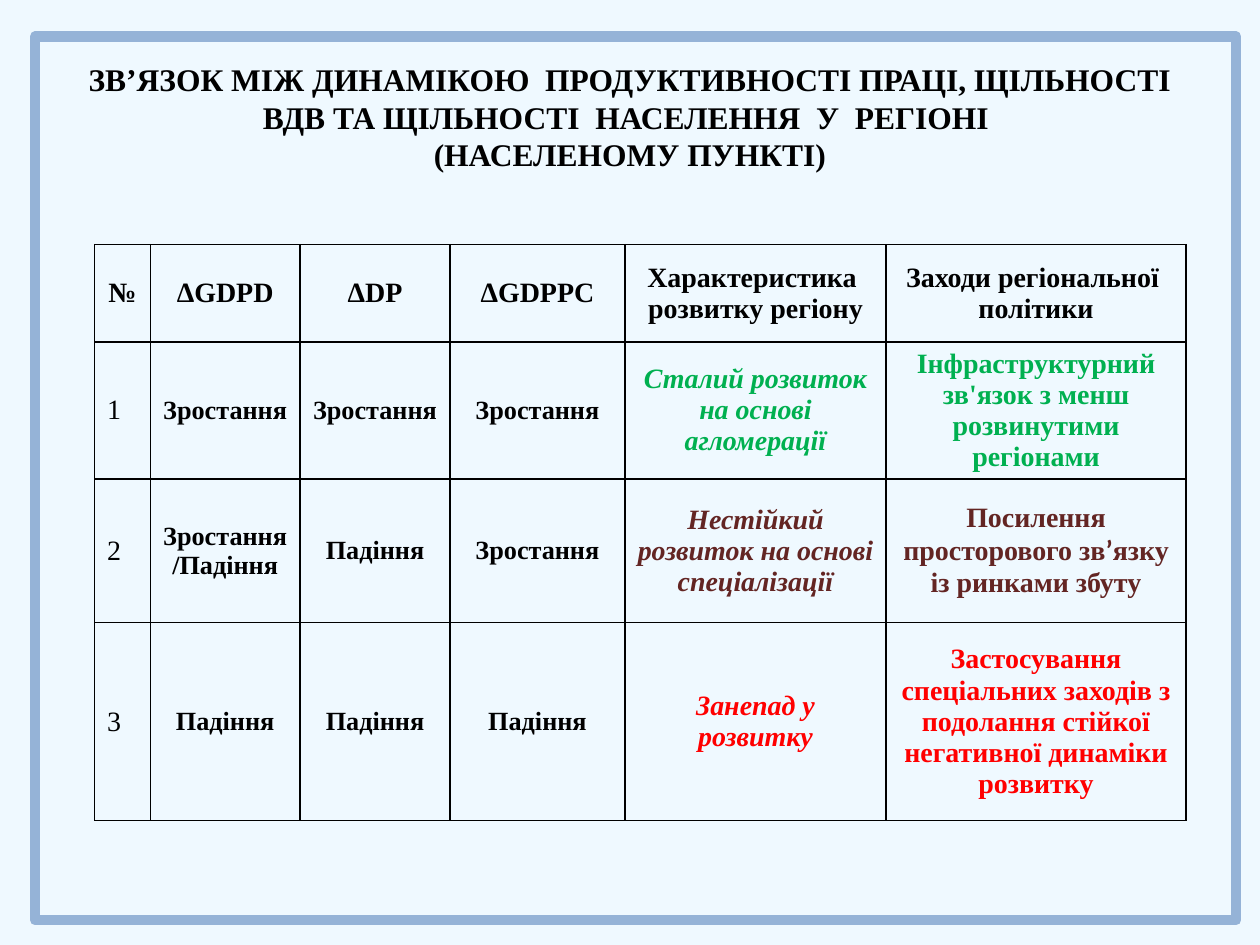
"""Build the slide on productivity, GDP density and population density dynamics."""
from dataclasses import dataclass

import lxml.etree
import pptx
import pptx.dml.color
import pptx.enum.shapes
import pptx.enum.text
import pptx.oxml
import pptx.oxml.ns
import pptx.table
import pptx.text.text
import pptx.util
from pptx.util import Cm

SERIF = "Times New Roman"
BLACK = "000000"
CENTER = pptx.enum.text.PP_ALIGN.CENTER
LEFT = pptx.enum.text.PP_ALIGN.LEFT
MIDDLE = pptx.enum.text.MSO_ANCHOR.MIDDLE
COLUMN_WIDTHS = (1.12, 3.02, 3.02, 3.53, 5.26, 6.05)
ROW_HEIGHTS = (1.96, 2.76, 2.9, 3.99)
HEADINGS = ("№", "ΔGDPD", "ΔDP", "ΔGDPPC", "Характеристика \nрозвитку регіону",
            "Заходи регіональної \nполітики")


@dataclass(frozen=True)
class TextStyle:
    size: float
    color: str = BLACK
    bold: bool = True
    italic: bool = False
    align: pptx.enum.text.PP_ALIGN = CENTER


@dataclass(frozen=True)
class Scenario:
    trends: tuple[str, str, str]
    outcome: str
    policy: str
    color: str


SCENARIOS = (
    Scenario(("Зростання", "Зростання", "Зростання"),
             "Сталий розвиток на основі агломерації",
             "Інфраструктурний зв'язок з менш розвинутими регіонами", "00B050"),
    Scenario(("Зростання /Падіння", "Падіння", "Зростання"),
             "Нестійкий розвиток на основі спеціалізації",
             "Посилення просторового зв’язку із ринками збуту", "632523"),
    Scenario(("Падіння", "Падіння", "Падіння"),
             "Занепад у розвитку",
             "Застосування спеціальних заходів з подолання стійкої негативної динаміки розвитку",
             "FF0000"),
)


def rgb(value: str) -> pptx.dml.color.RGBColor:
    """Turn a hex string into a colour."""
    return pptx.dml.color.RGBColor.from_string(value)


def format_paragraph(paragraph: pptx.text.text._Paragraph, style: TextStyle) -> None:
    """Apply a text style to a whole paragraph."""
    paragraph.alignment = style.align
    font = paragraph.font
    font.name, font.size = SERIF, pptx.util.Pt(style.size)
    font.bold, font.italic = style.bold, style.italic
    font.color.rgb = rgb(style.color)


def add_borders(cell: pptx.table._Cell) -> None:
    """Draw a thin black line on each side of a cell."""
    properties = cell._tc.get_or_add_tcPr()
    for side in ("lnL", "lnR", "lnT", "lnB"):
        line = lxml.etree.SubElement(properties, pptx.oxml.ns.qn(f"a:{side}"), w="12700")
        fill = lxml.etree.SubElement(line, pptx.oxml.ns.qn("a:solidFill"))
        lxml.etree.SubElement(fill, pptx.oxml.ns.qn("a:srgbClr"), val=BLACK)


def fill_cell(cell: pptx.table._Cell, text: str, style: TextStyle) -> None:
    """Write a bordered cell, with any curly apostrophe set in Calibri."""
    add_borders(cell)
    cell.fill.background()
    cell.vertical_anchor = MIDDLE
    cell.margin_left = cell.margin_right = Cm(0.25)
    paragraph = cell.text_frame.paragraphs[0]
    before, apostrophe, after = text.partition("’")
    paragraph.text = before
    if apostrophe:
        mark = paragraph.add_run()
        mark.text, mark.font.name = apostrophe, "Calibri"
        paragraph.add_run().text = after
    format_paragraph(paragraph, style)


def scenario_cells(number: int, scenario: Scenario) -> list[tuple[str, TextStyle]]:
    """Pair each text of a scenario row with its style."""
    return [
        (str(number), TextStyle(16, bold=False, align=LEFT)),
        *((trend, TextStyle(15)) for trend in scenario.trends),
        (scenario.outcome, TextStyle(16, scenario.color, italic=True)),
        (scenario.policy, TextStyle(16, scenario.color)),
    ]


def main() -> None:
    """Draw the slide and save it."""
    presentation = pptx.Presentation()
    presentation.slide_width, presentation.slide_height = Cm(25.4), Cm(19.05)
    slide = presentation.slides.add_slide(presentation.slide_layouts[5])
    slide.background.fill.solid()
    slide.background.fill.fore_color.rgb = rgb("EFF9FF")

    frame = slide.shapes.add_shape(pptx.enum.shapes.MSO_SHAPE.RECTANGLE,
                                   Cm(0.71), Cm(0.74), Cm(24.21), Cm(17.81))
    frame.shadow.inherit = False
    frame.fill.background()
    frame.line.color.rgb = rgb("95B3D7")
    frame.line.width = pptx.util.Pt(6)

    title = slide.shapes.title
    title.left, title.top, title.width, title.height = Cm(1.27), Cm(0.76), Cm(22.86), Cm(3.18)
    title.text_frame.auto_size = pptx.enum.text.MSO_AUTO_SIZE.NONE
    title.text_frame.vertical_anchor = MIDDLE
    heading = title.text_frame.paragraphs[0]
    heading.text = ("ЗВ’ЯЗОК МІЖ ДИНАМІКОЮ  ПРОДУКТИВНОСТІ ПРАЦІ, ЩІЛЬНОСТІ ВДВ ТА "
                    "ЩІЛЬНОСТІ  НАСЕЛЕННЯ  У  РЕГІОНІ \n(НАСЕЛЕНОМУ ПУНКТІ)")
    format_paragraph(heading, TextStyle(18))

    rows = [[(text, TextStyle(16)) for text in HEADINGS]]
    rows += [scenario_cells(number, scenario) for number, scenario in enumerate(SCENARIOS, 1)]
    table = slide.shapes.add_table(len(rows), len(HEADINGS), Cm(1.91), Cm(4.93),
                                   Cm(sum(COLUMN_WIDTHS)), Cm(sum(ROW_HEIGHTS))).table
    table.first_row = table.horz_banding = False
    for column, width in zip(table.columns, COLUMN_WIDTHS):
        column.width = Cm(width)
    for row, height, contents in zip(table.rows, ROW_HEIGHTS, rows):
        row.height = Cm(height)
        for cell, (text, style) in zip(row.cells, contents):
            fill_cell(cell, text, style)

    presentation.save("out.pptx")


if __name__ == "__main__":
    main()
